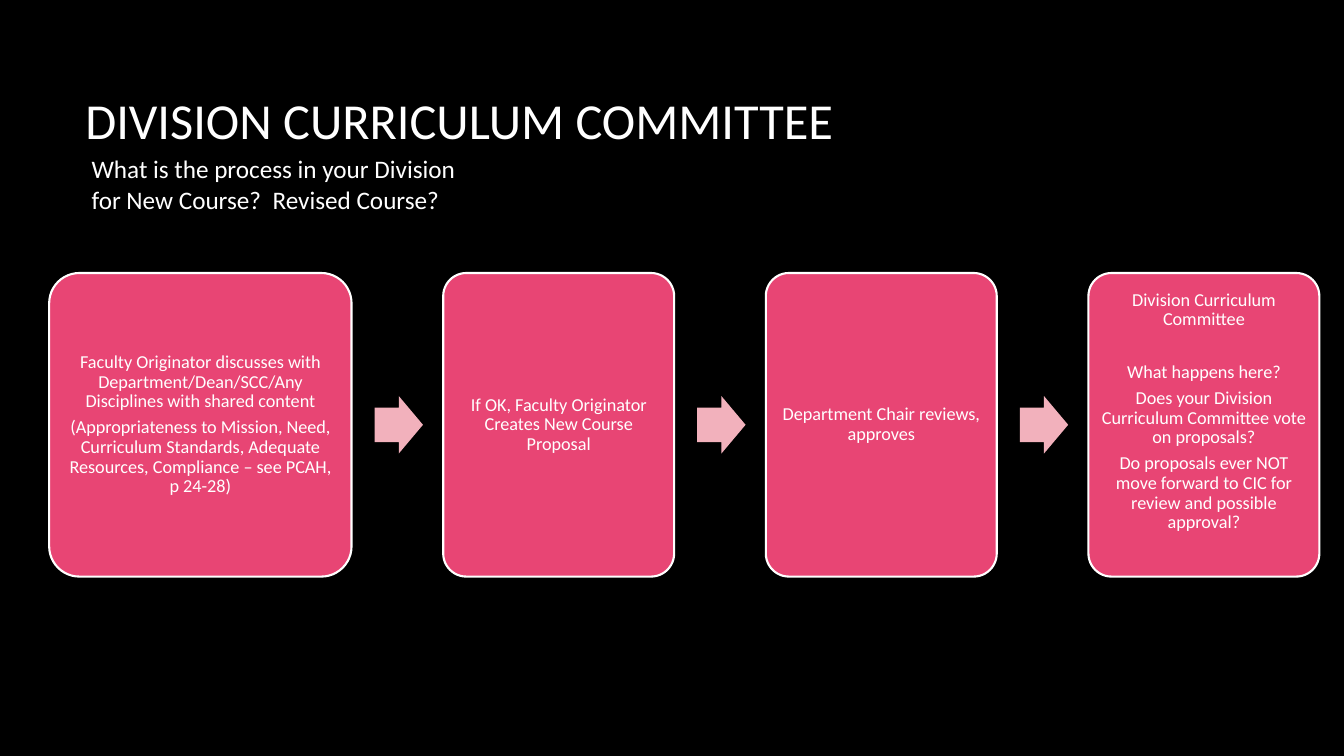
"""Build the division curriculum committee process slide."""
from pptx import Presentation, util as u
from pptx.dml.color import RGBColor
from pptx.enum import shapes, text

COLOURS = {"background": "000000", "text": "FFFFFF", "card": "E84574", "arrow": "F2B1BC"}

CARD_TOP, CARD_HEIGHT, GAP = 6.88, 7.65, 2.31
ARROW_WIDTH, ARROW_HEIGHT, ARROW_OFFSET = 1.22, 1.45, 0.58
CARD_INSET = 0.13
LINE_AFTER = 4.55
BREAK_AFTER = 23.4

STEPS = [
    (7.62, CARD_INSET, [
        ("Faculty Originator discusses with Department/Dean/SCC/Any Disciplines "
         "with shared content", LINE_AFTER),
        ("(Appropriateness to Mission, Need, Curriculum Standards, Adequate "
         "Resources, Compliance – see PCAH, p 24-28)", LINE_AFTER),
    ]),
    (5.82, CARD_INSET, [("If OK, Faculty Originator Creates New Course Proposal", LINE_AFTER)]),
    (5.82, CARD_INSET, [("Department Chair reviews, approves", LINE_AFTER)]),
    (5.82, 0.79, [
        ("Division Curriculum Committee", BREAK_AFTER),
        ("What happens here?", LINE_AFTER),
        ("Does your Division Curriculum Committee vote on proposals?", LINE_AFTER),
        ("Do proposals ever NOT move forward to CIC for review and possible approval?",
         LINE_AFTER),
    ]),
]


def colour(name):
    """Return the named palette colour."""
    return RGBColor.from_string(COLOURS[name])


def apply(target, values):
    """Set each attribute in values on target."""
    for name, value in values.items():
        setattr(target, name, value)


class ProcessSlide:
    """Hold the style and the current slide."""

    font = "Calibri"

    def __init__(self, presentation):
        """Add a blank slide with a black background."""
        self.slide = presentation.slides.add_slide(presentation.slide_layouts[6])
        fill = self.slide.background.fill
        fill.solid()
        fill.fore_color.rgb = colour("background")

    def add_paragraphs(self, frame, paragraphs, size, **paragraph_format):
        """Put (wording, space after) pairs into a text frame."""
        apply(frame, {"word_wrap": True, "vertical_anchor": text.MSO_ANCHOR.MIDDLE})
        for index, (wording, after) in enumerate(paragraphs):
            paragraph = frame.add_paragraph() if index else frame.paragraphs[0]
            apply(paragraph, {"text": wording, "space_after": u.Pt(after), **paragraph_format})
            apply(paragraph.font, {"name": self.font, "size": u.Pt(size)})
            paragraph.font.color.rgb = colour("text")

    def text_box(self, bounds, wording, size):
        """Add a left-aligned text box."""
        box = self.slide.shapes.add_textbox(*map(u.Cm, bounds))
        self.add_paragraphs(box.text_frame, [(wording, 0)], size)

    def shape(self, kind, bounds, fill, adjustments):
        """Add a flat filled preset shape."""
        shape = self.slide.shapes.add_shape(kind, *map(u.Cm, bounds))
        shape.shadow.inherit = False
        shape.fill.solid()
        shape.fill.fore_color.rgb = colour(fill)
        shape.line.fill.background()
        for index, value in enumerate(adjustments):
            shape.adjustments[index] = value
        return shape

    def card(self, left, width, bottom_inset, paragraphs):
        """Add one process step."""
        card = self.shape(shapes.MSO_SHAPE.ROUNDED_RECTANGLE,
                          (left, CARD_TOP, width, CARD_HEIGHT), "card", [0.1])
        card.line.color.rgb = colour("text")
        card.line.width = u.Pt(1.5)
        inset = u.Cm(CARD_INSET)
        apply(card.text_frame, {"margin_left": inset, "margin_right": inset,
                                "margin_top": inset, "margin_bottom": u.Cm(bottom_inset)})
        self.add_paragraphs(card.text_frame, paragraphs, 13,
                            alignment=text.PP_ALIGN.CENTER, line_spacing=0.9)

    def arrow(self, left):
        """Add an arrow centred on the height of the cards."""
        top = CARD_TOP + (CARD_HEIGHT - ARROW_HEIGHT) / 2
        self.shape(shapes.MSO_SHAPE.RIGHT_ARROW,
                   (left, top, ARROW_WIDTH, ARROW_HEIGHT), "arrow", [0.6, 0.5])


def main():
    """Build and save the presentation."""
    presentation = Presentation()
    apply(presentation, {"slide_width": u.Cm(33.87), "slide_height": u.Cm(19.05)})
    slide = ProcessSlide(presentation)
    slide.text_box((1.9, 1.7, 28.14, 2.6), "DIVISION CURRICULUM COMMITTEE", 36)
    slide.text_box((2.06, 3.81, 10.03, 1.65),
                   "What is the process in your Division for New Course?  Revised Course?", 18)
    left = 1.24
    for index, (width, bottom_inset, paragraphs) in enumerate(STEPS):
        if index:
            slide.arrow(left - GAP + ARROW_OFFSET)
        slide.card(left, width, bottom_inset, paragraphs)
        left += width + GAP
    presentation.save("out.pptx")


if __name__ == "__main__":
    main()
